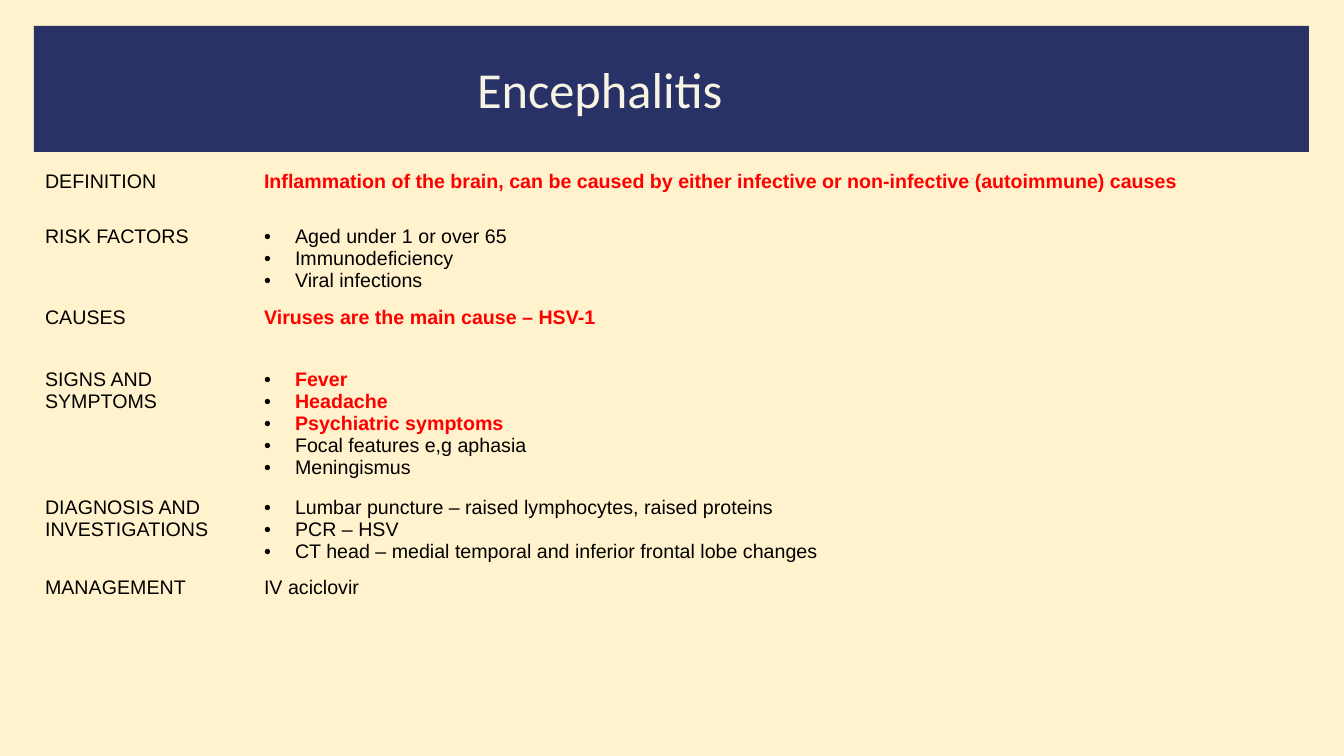
"""Build the Encephalitis summary slide."""
import pptx
import pptx.dml.color
import pptx.enum.shapes
import pptx.enum.text
import pptx.oxml
import pptx.oxml.ns
import pptx.util

C = {"cream": "FFF2CC", "navy": "293267", "title": "F8F4E4", "black": "000000", "red": "FF0000"}
NO_GRID = "{2D5ABB26-0587-4C30-8999-92F81FD0307C}"
ROWS = [
    (55, "DEFINITION", False, [
        ("Inflammation of the brain, can be caused by either infective or "
         "non-infective (autoimmune) causes", True)]),
    (81, "RISK FACTORS", True, [
        ("Aged under 1 or over 65", False), ("Immunodeficiency", False),
        ("Viral infections", False)]),
    (62, "CAUSES", False, [("Viruses are the main cause – HSV-1", True)]),
    (128, "SIGNS AND SYMPTOMS", True, [
        ("Fever", True), ("Headache", True), ("Psychiatric symptoms", True),
        ("Focal features e,g aphasia", False), ("Meningismus", False)]),
    (80, "DIAGNOSIS AND INVESTIGATIONS", True, [
        ("Lumbar puncture – raised lymphocytes, raised proteins", False),
        ("PCR – HSV", False),
        ("CT head – medial temporal and inferior frontal lobe changes", False)]),
    (62, "MANAGEMENT", False, [("IV aciclovir", False)]),
]


def px(n):
    return pptx.util.Emu(round(n * 914400 / 100.8))


def style(r, font, size, color, bold=False):
    r.font.name, r.font.size, r.font.bold = font, pptx.util.Pt(size), bold
    r.font.color.rgb = pptx.dml.color.RGBColor.from_string(C[color])


prs = pptx.Presentation()
prs.slide_width, prs.slide_height = px(1344), px(756)
s = prs.slides.add_slide(prs.slide_layouts[5])
s.background.fill.solid()
s.background.fill.fore_color.rgb = pptx.dml.color.RGBColor.from_string(C["cream"])

band = s.shapes.add_shape(pptx.enum.shapes.MSO_SHAPE.RECTANGLE, px(34), px(26), px(1275), px(126))
band.shadow.inherit = False
band.fill.solid()
band.fill.fore_color.rgb = pptx.dml.color.RGBColor.from_string(C["navy"])
band.line.fill.background()

title = s.shapes.title
title.element.addprevious(band.element)
title.left, title.top, title.width, title.height = px(467), px(53), px(561), px(72)
tf = title.text_frame
tf.text = "Encephalitis"
tf.vertical_anchor = pptx.enum.text.MSO_ANCHOR.TOP
tf.paragraphs[0].alignment = pptx.enum.text.PP_ALIGN.LEFT
style(tf.paragraphs[0].runs[0], "Calibri", 36, "title")

heights = [row[0] for row in ROWS]
frame = s.shapes.add_table(len(ROWS), 2, px(35), px(166), px(1274), px(sum(heights)))
table = frame.table
table.first_row = table.horz_banding = False
table._tbl.tblPr.find(pptx.oxml.ns.qn("a:tableStyleId")).text = NO_GRID
table.columns[0].width, table.columns[1].width = px(219), px(1055)

for i, (height, label, bulleted, lines) in enumerate(ROWS):
    table.rows[i].height = px(height)
    for j, entries in enumerate([[(label, False)], lines]):
        cell = table.cell(i, j)
        cell.fill.background()
        cell.text_frame.text = "\n".join(text for text, key in entries)
        for p, (text, key) in zip(cell.text_frame.paragraphs, entries):
            if j == 1 and bulleted:
                pPr = p._p.get_or_add_pPr()
                pPr.set("marL", str(px(31)))
                pPr.set("indent", str(px(-31)))
                ns = pptx.oxml.ns.nsdecls("a")
                for xml in (f'<a:buClr {ns}><a:srgbClr val="{C["black"]}"/></a:buClr>',
                            f'<a:buFont {ns} typeface="Arial"/>',
                            f'<a:buChar {ns} char="•"/>'):
                    pPr.append(pptx.oxml.parse_xml(xml))
            style(p.runs[0], "Arial", 14, "red" if key else "black", key)

prs.save("out.pptx")
